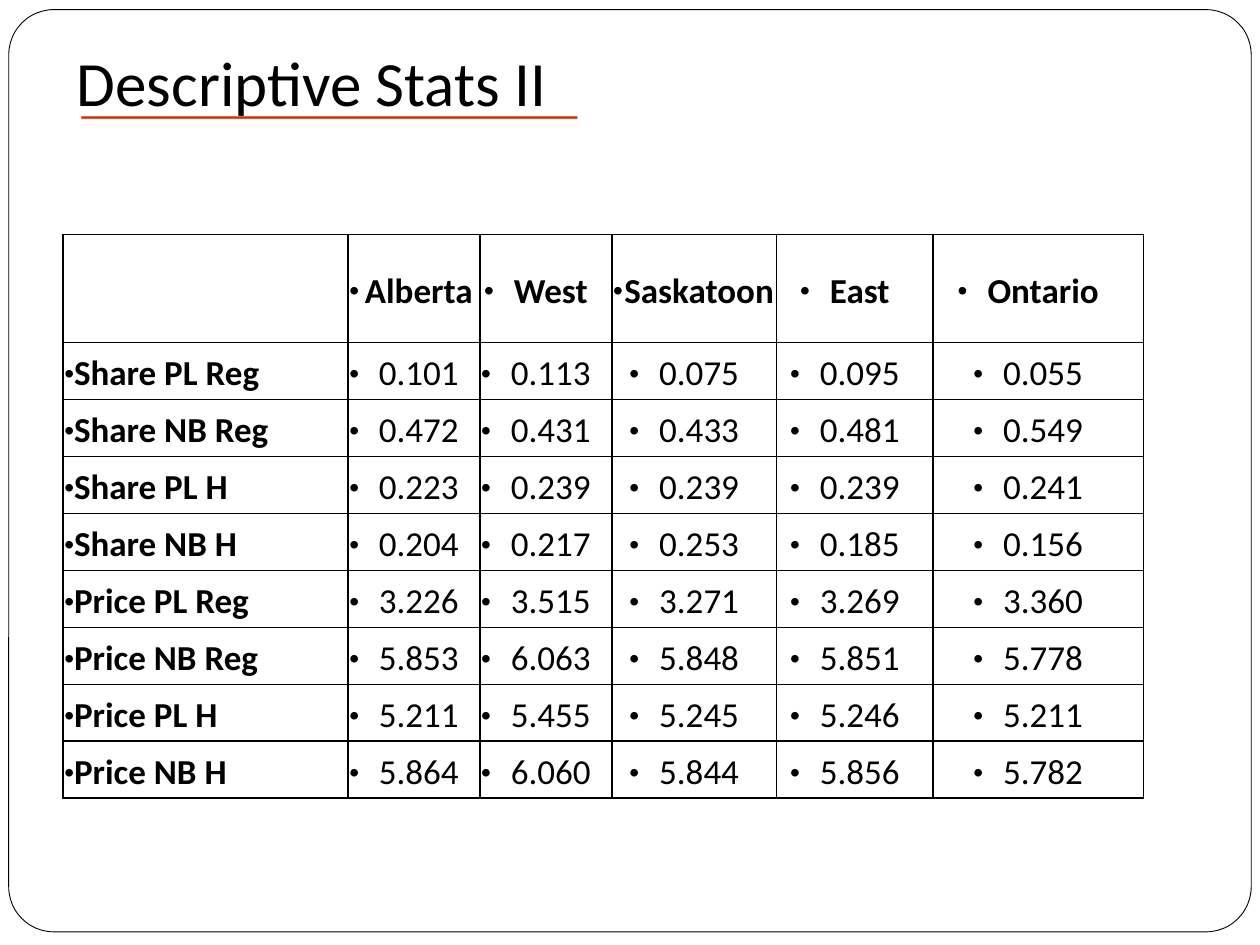
from lxml import etree
from pptx import Presentation
from pptx.dml.color import RGBColor
from pptx.enum.shapes import MSO_SHAPE
from pptx.enum.text import MSO_ANCHOR, PP_ALIGN
from pptx.oxml.ns import qn
from pptx.util import Pt

BLACK = RGBColor(0x00, 0x00, 0x00)
WHITE = RGBColor(0xFF, 0xFF, 0xFF)
RED = RGBColor(0xCC, 0x33, 0x00)
LIGHT = RGBColor(0xD9, 0xD9, 0xD9)
GREY = RGBColor(0xBF, 0xBF, 0xBF)
FONT = "Calibri"
RECT, ROUND = MSO_SHAPE.RECTANGLE, MSO_SHAPE.ROUNDED_RECTANGLE
MIDDLE = MSO_ANCHOR.MIDDLE
LEFT, CENTER = PP_ALIGN.LEFT, PP_ALIGN.CENTER

WIDTHS = (162.9, 75.4, 75.4, 94.2, 89.4, 120.2)
HEIGHTS = (31.7, 61.9) + (32.57,) * 8
HEAD = ("", "Alberta", "West", "Saskatoon", "East", "Ontario")
ROWS = (
    ("Share PL Reg", "0.101", "0.113", "0.075", "0.095", "0.055"),
    ("Share NB Reg", "0.472", "0.431", "0.433", "0.481", "0.549"),
    ("Share PL H", "0.223", "0.239", "0.239", "0.239", "0.241"),
    ("Share NB H", "0.204", "0.217", "0.253", "0.185", "0.156"),
    ("Price PL Reg", "3.226", "3.515", "3.271", "3.269", "3.360"),
    ("Price NB Reg", "5.853", "6.063", "5.848", "5.851", "5.778"),
    ("Price PL H", "5.211", "5.455", "5.245", "5.246", "5.211"),
    ("Price NB H", "5.864", "6.060", "5.844", "5.856", "5.782"),
)


def node(parent, tag, **attrs):
    return etree.SubElement(parent, qn(tag), attrs)


def write(frame, text, size=20, bold=False, align=LEFT, bullet=False):
    para = frame.paragraphs[0]
    para.alignment = align
    para.line_spacing = 1.1
    run = para.add_run()
    run.text = text
    run.font.name = FONT
    run.font.size = Pt(size)
    run.font.bold = bold
    run.font.color.rgb = BLACK
    if bullet:
        props = para._p.get_or_add_pPr()
        props.set("marL", "0")
        props.set("indent", str(-Pt(17)))
        for tag in ("a:spcBef", "a:spcAft"):
            node(node(props, tag), "a:spcPct", val="20000")
        node(props, "a:buSzPct", val="80000")
        node(props, "a:buFont", typeface="Arial")
        node(props, "a:buChar", char="•")


def box(shapes, kind, x, y, w, h, fill, line=None):
    shape = shapes.add_shape(kind, Pt(x), Pt(y), Pt(w), Pt(h))
    shape.shadow.inherit = False
    shape.fill.solid()
    shape.fill.fore_color.rgb = fill
    if line is None:
        shape.line.fill.background()
    else:
        shape.line.color.rgb = line
        shape.line.width = Pt(0.5)
    return shape


def edge(cell, sides):
    """Rule the given sides in black and clear the others."""
    props = cell._tc.get_or_add_tcPr()
    for spot, side in enumerate("LRTB"):
        rule = etree.Element(qn("a:ln" + side), w=str(Pt(1)))
        if side in sides:
            fill = node(rule, "a:solidFill")
            node(fill, "a:srgbClr", val=str(BLACK))
        else:
            node(rule, "a:noFill")
        props.insert(spot, rule)


def add_stats(slide):
    table = slide.shapes.add_table(
        len(HEIGHTS), len(WIDTHS), Pt(36), Pt(102.2),
        Pt(sum(WIDTHS)), Pt(sum(HEIGHTS))).table
    table.first_row = table.horz_banding = False
    for col, width in zip(table.columns, WIDTHS):
        col.width = Pt(width)
    for row, height in zip(table.rows, HEIGHTS):
        row.height = Pt(height)

    # Empty band above the headings
    table.cell(0, 1).merge(table.cell(0, len(WIDTHS) - 1))
    for cell in table.rows[0].cells:
        cell.fill.background()
        edge(cell, "B")

    # Headings and figures
    for r, texts in enumerate((HEAD,) + ROWS, 1):
        for c, text in enumerate(texts):
            cell = table.cell(r, c)
            cell.fill.background()
            edge(cell, "LRTB")
            cell.vertical_anchor = MIDDLE
            cell.margin_left = cell.margin_right = cell.margin_top = Pt(0.75)
            cell.margin_bottom = 0
            if text:
                write(cell.text_frame, text, bold=r == 1 or c == 0,
                      align=CENTER if c else LEFT, bullet=True)


def main():
    deck = Presentation()
    deck.slide_width, deck.slide_height = Pt(720), Pt(540)
    slide = deck.slides.add_slide(deck.slide_layouts[5])

    # Title
    title = slide.shapes.title
    title.left, title.top = Pt(36.7), Pt(-0.7)
    title.width, title.height = Pt(591), Pt(90)
    title.text_frame.vertical_anchor = MIDDLE
    write(title.text_frame, "Descriptive Stats II", size=36)

    # Rounded frame behind everything
    frame = box(slide.shapes, ROUND, 5, 5.5, 710, 527, WHITE, BLACK)
    frame.adjustments[0] = 0.049
    title.element.addprevious(frame.element)

    # Rule under the title
    group = slide.shapes.add_group_shape()
    for y, h, fill in ((66.4, 1.6, RED), (66.2, 0.4, LIGHT), (67.8, 0.4, GREY)):
        box(group.shapes, RECT, 46.5, y, 283.5, h, fill)

    add_stats(slide)
    deck.save("out.pptx")


if __name__ == "__main__":
    main()
